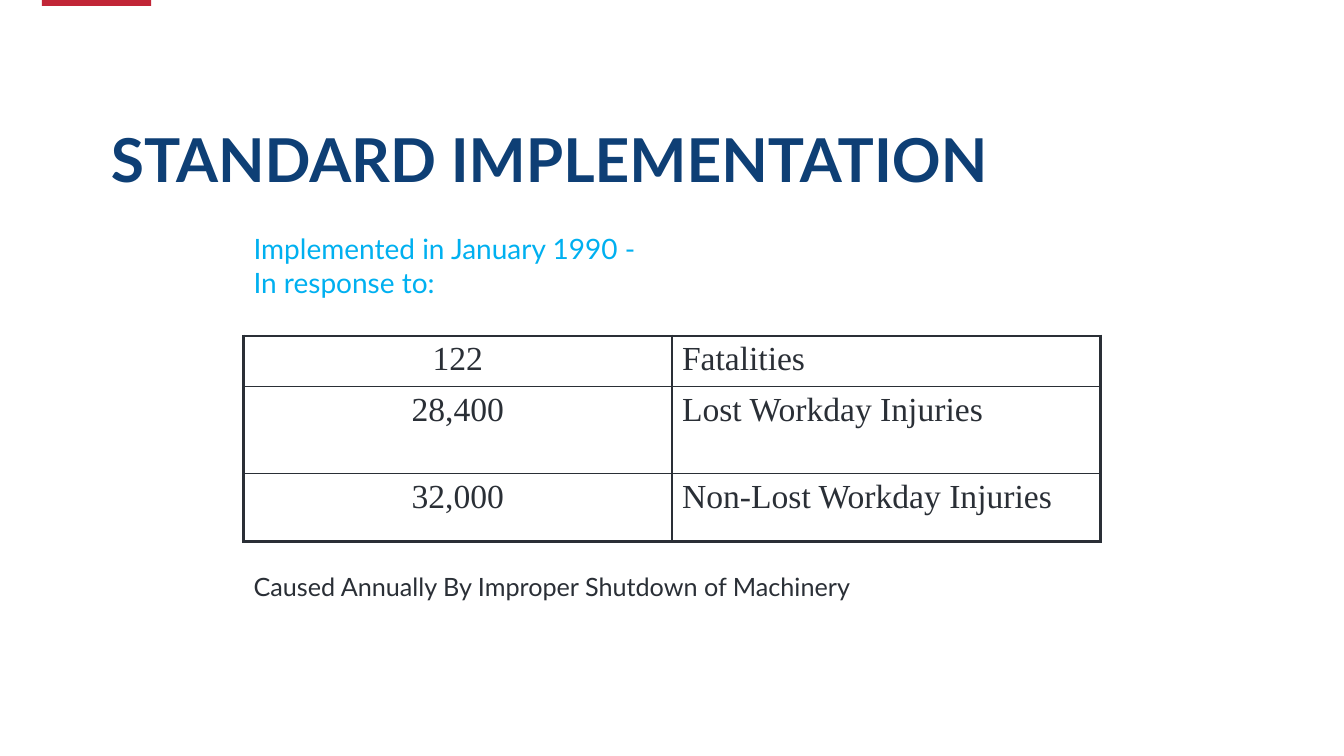
from lxml import etree
from pptx import Presentation
from pptx.dml.color import RGBColor
from pptx.enum.shapes import MSO_SHAPE
from pptx.enum.text import MSO_ANCHOR, PP_ALIGN
from pptx.oxml.ns import qn
from pptx.util import Pt

RECT = MSO_SHAPE.RECTANGLE
TOP, BOTTOM = MSO_ANCHOR.TOP, MSO_ANCHOR.BOTTOM
LEFT, CENTER = PP_ALIGN.LEFT, PP_ALIGN.CENTER
TITLE_ONLY = 5

COLORS = {"navy": "0E3F75", "red": "C12637", "blue": "00B0F0", "ink": "2A2F36"}
FORMATS = {
    "title": {"name": "Lato", "size": Pt(43.2), "bold": True, "color": "navy"},
    "intro": {"name": "Lato", "size": Pt(20), "color": "blue"},
    "caption": {"name": "Lato", "size": Pt(18), "color": "ink"},
    "cell": {"name": "Times New Roman", "size": Pt(24), "color": "ink"},
}
INJURIES = [
    ("122", "Fatalities"),
    ("28,400", "Lost Workday Injuries"),
    ("32,000", "Non-Lost Workday Injuries"),
]


class SlideBuilder:
    def __init__(self, s):
        self.s = s

    def fill_text(self, tf, lines, style, align=LEFT, spacing=1.0):
        for i, line in enumerate(lines):
            p = tf.paragraphs[0] if i == 0 else tf.add_paragraph()
            p.alignment, p.line_spacing, p.space_before = align, spacing, Pt(0)
            r = p.add_run()
            r.text = line
            for key, value in FORMATS[style].items():
                if key == "color":
                    r.font.color.rgb = RGBColor.from_string(COLORS[value])
                else:
                    setattr(r.font, key, value)

    def title(self, text, box):
        sp = self.s.shapes.title
        sp.left, sp.top, sp.width, sp.height = map(Pt, box)
        tf = sp.text_frame
        tf.word_wrap, tf.vertical_anchor, tf.margin_bottom = True, BOTTOM, Pt(4)
        self.fill_text(tf, [text], "title", spacing=0.9)

    def bar(self, box, color):
        sp = self.s.shapes.add_shape(RECT, *map(Pt, box))
        sp.shadow.inherit = False
        sp.fill.solid()
        sp.fill.fore_color.rgb = RGBColor.from_string(COLORS[color])
        sp.line.fill.background()

    def text(self, lines, box, style):
        tf = self.s.shapes.add_textbox(*map(Pt, box)).text_frame
        tf.word_wrap = True
        self.fill_text(tf, lines, style)

    def border(self, cell, side, width):
        ln = etree.SubElement(cell._tc.get_or_add_tcPr(), qn(f"a:{side}"), w=str(Pt(width)))
        fill = etree.SubElement(ln, qn("a:solidFill"))
        etree.SubElement(fill, qn("a:srgbClr"), val=COLORS["ink"])

    def table(self, rows, left, top, col_width, heights, outer=2.25, inner=1):
        n_rows, n_cols = len(rows), len(rows[0])
        frame = self.s.shapes.add_table(n_rows, n_cols, Pt(left), Pt(top),
                                        Pt(col_width * n_cols), Pt(sum(heights)))
        table = frame.table
        table.first_row = table.horz_banding = False
        for column in table.columns:
            column.width = Pt(col_width)
        for i, values in enumerate(rows):
            table.rows[i].height = Pt(heights[i])
            for j, value in enumerate(values):
                cell = table.cell(i, j)
                cell.vertical_anchor = TOP
                self.fill_text(cell.text_frame, [value], "cell", LEFT if j else CENTER)
                # Heavy outside edges, thin inside ones
                edges = {"lnL": j == 0, "lnR": j == n_cols - 1,
                         "lnT": i == 0, "lnB": i == n_rows - 1}
                for side, is_outer in edges.items():
                    self.border(cell, side, outer if is_outer else inner)
                cell.fill.background()


def main():
    prs = Presentation()
    prs.slide_width, prs.slide_height = Pt(960), Pt(540)
    slide = SlideBuilder(prs.slides.add_slide(prs.slide_layouts[TITLE_ONLY]))

    # Heading
    slide.bar((30, -2.9, 78, 7.2), "red")
    slide.title("STANDARD IMPLEMENTATION", (72, 54, 816, 90))

    # Injury figures with the lines above and below
    slide.table(INJURIES, 174, 240, 306, (36, 62, 49))
    slide.text(["Implemented in January 1990 -", "In response to:"],
               (174, 162, 558, 56), "intro")
    slide.text(["Caused Annually By Improper Shutdown of Machinery"],
               (174, 404.4, 558, 29), "caption")

    prs.save("out.pptx")


if __name__ == "__main__":
    main()
